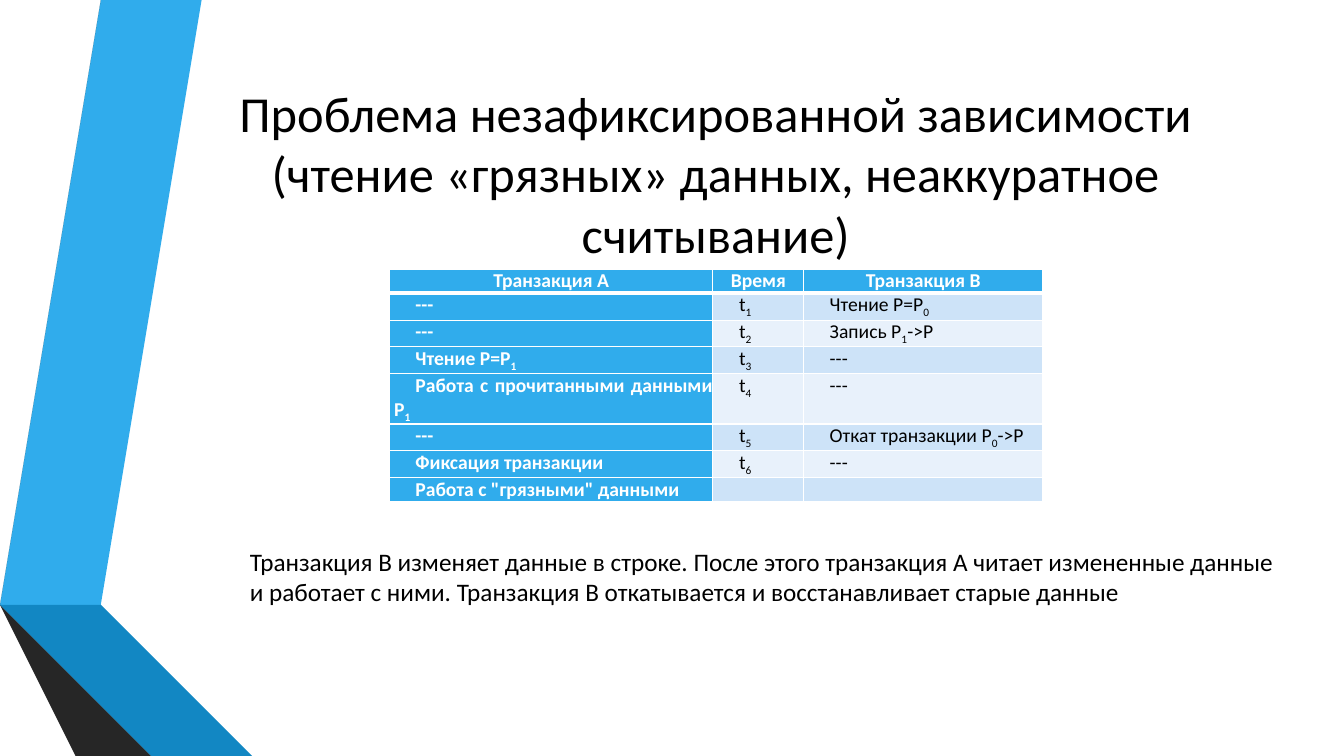
from lxml.etree import SubElement
from pptx import Presentation
from pptx.dml.color import RGBColor
from pptx.enum.text import MSO_ANCHOR, PP_ALIGN
from pptx.oxml.ns import qn
from pptx.util import Inches, Pt

WIDE, HIGH = 13.33, 7.5
FONT = "Calibri"
BLUE, WHITE, BLACK = "30ACEC", "FFFFFF", "000000"
BANDS = ["CDE3F8", "E8F1FB"]

TITLE = "Проблема незафиксированной зависимости (чтение «грязных» данных, неаккуратное считывание)"
NOTE = ("Транзакция B изменяет данные в строке. После этого транзакция A читает "
        "измененные данные и работает с ними. Транзакция B откатывается "
        "и восстанавливает старые данные")

# An underscore lowers the next character
ROWS = [
    ("Транзакция A ", "Время ", "Транзакция B "),
    ("--- ", "t_1", "Чтение P=P_0"),
    ("--- ", "t_2", "Запись P_1->P"),
    ("Чтение P=P_1", "t_3", "--- "),
    ("Работа с прочитанными данными P_1", "t_4", "--- "),
    ("--- ", "t_5", "Откат транзакции P_0->P "),
    ("Фиксация транзакции ", "t_6", "--- "),
    ('Работа с "грязными" данными ', "", ""),
]
COLS = [3.21, 0.9, 2.37]
LINE, SUB, TALL = 0.24, 0.26, 0.5
HEIGHTS = [LINE, SUB, SUB, SUB, TALL, SUB, SUB, LINE]

# Ribbons at the left edge, back to front
RIBBONS = [
    (BLUE, [(0.5, 5.78), (0.77, 5.83), (1.73, 0), (1.45, 0)]),
    ("595959", [(1.39, 0), (1.11, 0), (0.16, 5.73), (0.44, 5.77)]),
    ("262626", [(0.16, 5.73), (1.45, HIGH), (1.51, HIGH)]),
    ("0C5A82", [(0.5, 5.79), (2.08, HIGH), (2.14, HIGH)]),
    ("1287C3", [(0.5, 5.78), (2.14, HIGH), (2.83, HIGH), (0.77, 5.83)]),
    ("404040", [(2.02, HIGH), (0.48, 5.83), (0.44, 5.77), (0.16, 5.73), (1.51, HIGH)]),
]


def color(code):
    return RGBColor.from_string(code)


def write(para, text, size, tint=BLACK, bold=False):
    first, *rest = text.split("_")
    parts = [(first, False)]
    for part in rest:
        parts += [(part[0], True), (part[1:], False)]
    for part, low in parts:
        if not part:
            continue
        run = para.add_run()
        run.text = part
        font = run.font
        font.name, font.size, font.bold = FONT, Pt(size), bold
        font.color.rgb = color(tint)
        if low:
            run._r.get_or_add_rPr().set("baseline", "-25000")


def add_text(slide, box, text, size, align, anchor):
    frame = slide.shapes.add_textbox(*map(Inches, box)).text_frame
    frame.word_wrap = True
    frame.vertical_anchor = anchor
    para = frame.paragraphs[0]
    para.alignment = align
    write(para, text, size)


def add_edges(cell, base):
    props = cell._tc.get_or_add_tcPr()
    for side, width in zip("LRTB", (1, 1, 1, base)):
        line = SubElement(props, qn("a:ln" + side), w=str(Pt(width)))
        fill = SubElement(line, qn("a:solidFill"))
        SubElement(fill, qn("a:srgbClr"), val=WHITE)


def fill_cell(cell, text, row, col):
    head = row == 0
    strong = head or col == 0
    add_edges(cell, 3 if head else 1)
    cell.fill.solid()
    cell.fill.fore_color.rgb = color(BLUE if strong else BANDS[(row - 1) % 2])
    cell.margin_left = cell.margin_right = cell.margin_top = cell.margin_bottom = 0
    para = cell.text_frame.paragraphs[0]
    para.alignment = PP_ALIGN.CENTER if head else PP_ALIGN.JUSTIFY
    para.space_before, para.space_after = Pt(3), Pt(8.2)
    props = para._p.get_or_add_pPr()
    props.set("marL", str(Inches(0.05)))
    props.set("indent", str(Inches(0 if head else 0.21)))
    if text:
        write(para, text, 14, WHITE if strong else BLACK, strong)
    else:
        SubElement(para._p, qn("a:endParaRPr"), sz="1400")


def main():
    deck = Presentation()
    deck.slide_width, deck.slide_height = Inches(WIDE), Inches(HIGH)
    slide = deck.slides.add_slide(deck.slide_layouts[6])

    # Ribbons
    for tint, points in RIBBONS:
        pen = slide.shapes.build_freeform(*points[0], scale=Inches(1))
        pen.add_line_segments(points[1:], close=True)
        ribbon = pen.convert_to_shape()
        ribbon.shadow.inherit = False
        ribbon.fill.solid()
        ribbon.fill.fore_color.rgb = color(tint)
        ribbon.line.fill.background()

    # Title
    add_text(slide, (1.62, 0.75, 10.96, 1.92), TITLE, 36,
             PP_ALIGN.CENTER, MSO_ANCHOR.MIDDLE)

    # Schedule of the two transactions
    box = (3.86, 2.67, sum(COLS), sum(HEIGHTS))
    table = slide.shapes.add_table(len(ROWS), len(COLS), *map(Inches, box)).table
    for col, width in zip(table.columns, COLS):
        col.width = Inches(width)
    for row, height in zip(table.rows, HEIGHTS):
        row.height = Inches(height)
    for row, texts in enumerate(ROWS):
        for col, text in enumerate(texts):
            fill_cell(table.cell(row, col), text, row, col)

    # Explanation
    add_text(slide, (2.38, 5.37, 10.5, 1.01), NOTE, 18,
             PP_ALIGN.LEFT, MSO_ANCHOR.TOP)

    deck.save("out.pptx")


if __name__ == "__main__":
    main()
